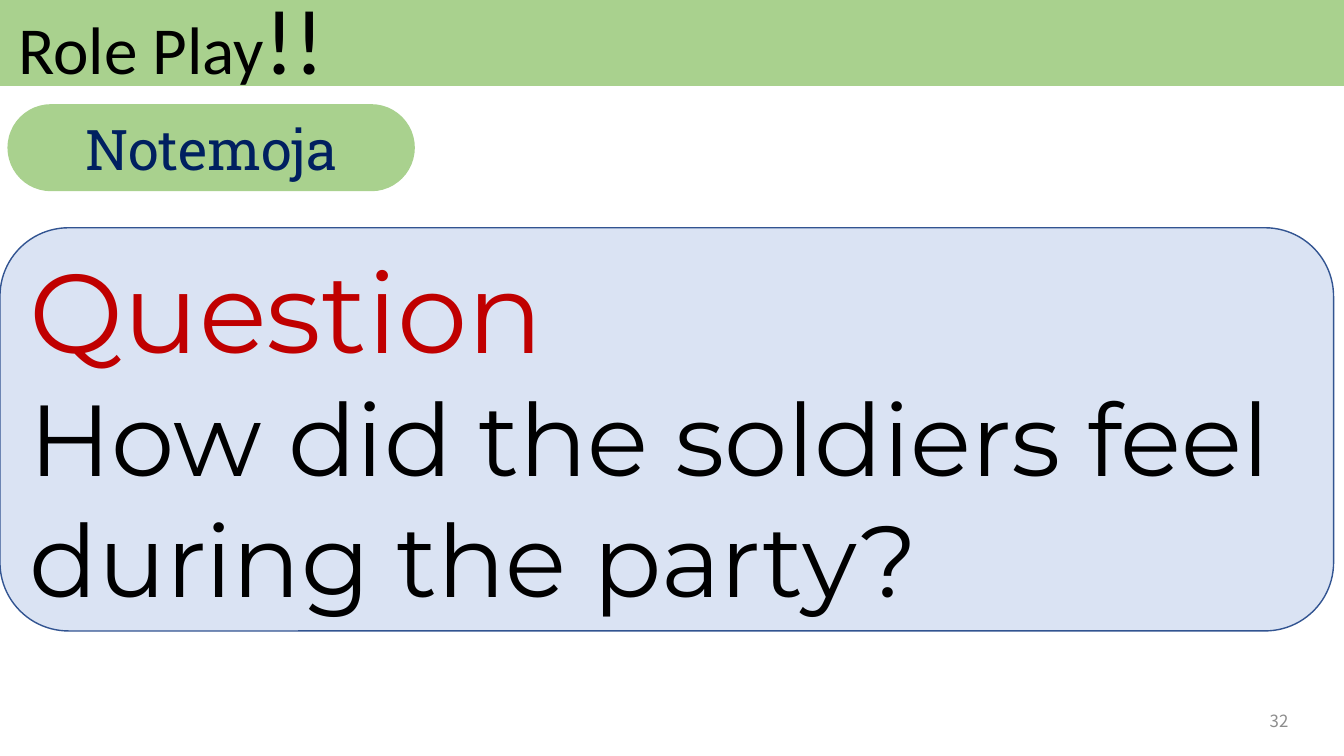
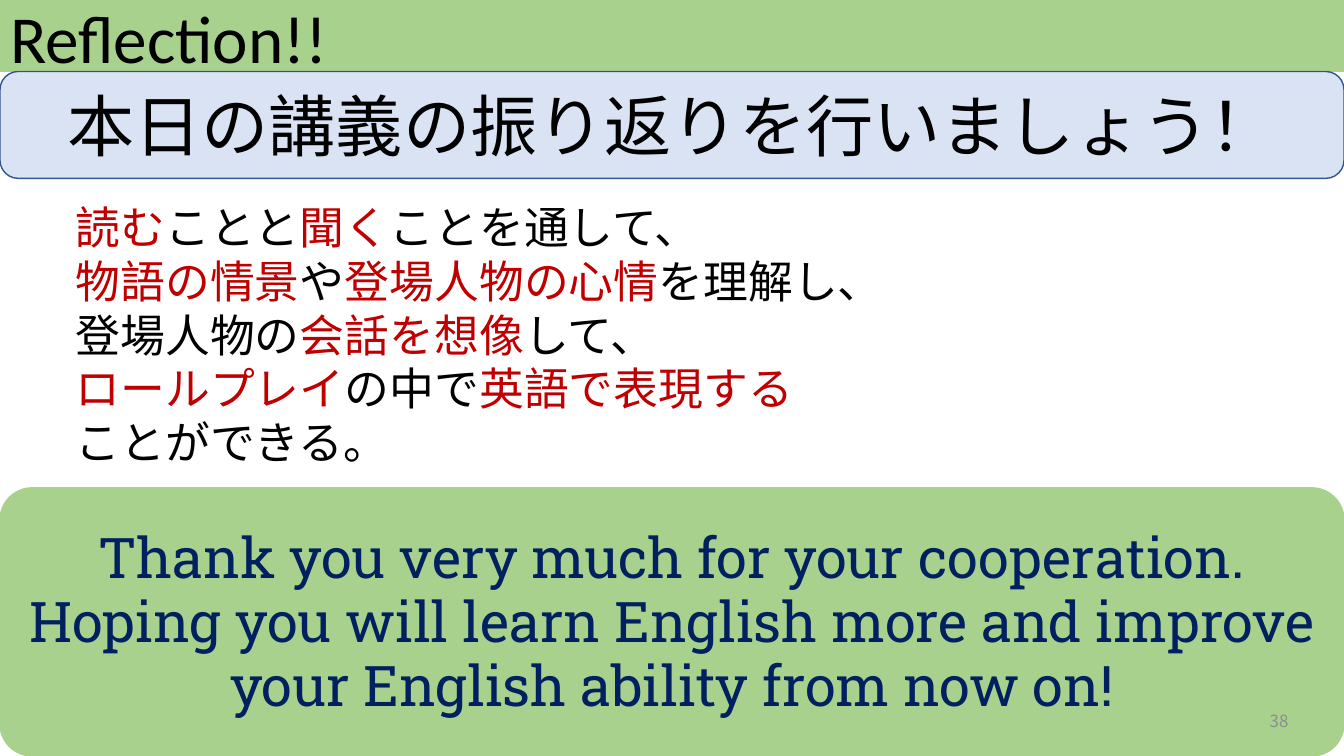
from lxml import etree
from pptx import Presentation
from pptx.dml.color import RGBColor
from pptx.enum import shapes, text
from pptx.oxml import ns
from pptx.util import Pt

GREEN = RGBColor(0xA9, 0xD1, 0x8E)
PALE_BLUE = RGBColor(0xDA, 0xE3, 0xF3)
BLUE = RGBColor(0x32, 0x54, 0x91)
NAVY = RGBColor(0x00, 0x20, 0x60)
RED = RGBColor(0xC0, 0x00, 0x00)
BLACK = RGBColor(0x00, 0x00, 0x00)
GREY = RGBColor(0x8C, 0x8C, 0x8C)

TITLE_FONT = "Calibri"
QUESTION_FONT = "Montserrat"
JAPANESE_FONT = "Noto Sans CJK JP"
SLAB_FONT = "Roboto Slab"

WIDTH, HEIGHT = 960, 540
TITLE_ONLY, TITLE_AND_BODY = 5, 1
LEFT, CENTER = text.PP_ALIGN.LEFT, text.PP_ALIGN.CENTER
RIGHT, JUSTIFY = text.PP_ALIGN.RIGHT, text.PP_ALIGN.JUSTIFY
TOP, MIDDLE = text.MSO_ANCHOR.TOP, text.MSO_ANCHOR.MIDDLE


class Lesson:
    """Holds the lesson style and the current page."""

    def __init__(self):
        self.deck = Presentation()
        self.deck.slide_width, self.deck.slide_height = Pt(WIDTH), Pt(HEIGHT)
        self.page = None

    def new_page(self, layout, band_height):
        self.page = self.deck.slides.add_slide(self.deck.slide_layouts[layout])
        band = self.panel(0, 0, WIDTH, band_height, GREEN, GREEN, corner=None)
        self.page.shapes.title.element.addprevious(band.element)

    def place(self, shape, left, top, width, height):
        shape.left, shape.top = Pt(left), Pt(top)
        shape.width, shape.height = Pt(width), Pt(height)

    def add_text(self, shape, paragraphs, font, align, anchor, spacing=1.0):
        """Each paragraph is a list of (words, size, colour) runs."""
        frame = shape.text_frame
        frame.word_wrap = True
        frame.auto_size = text.MSO_AUTO_SIZE.NONE
        frame.vertical_anchor = anchor
        for index, runs in enumerate(paragraphs):
            para = frame.add_paragraph() if index else frame.paragraphs[0]
            para.alignment, para.line_spacing = align, spacing
            para.space_before = Pt(0)
            for words, size, colour in runs:
                span = para.add_run()
                span.text = words
                span.font.size, span.font.name = Pt(size), font
                span.font.color.rgb = colour
                # East Asian glyphs need their own font entry
                asian = etree.SubElement(span.font._element, ns.qn("a:ea"))
                asian.set("typeface", font)

    def panel(self, left, top, width, height, fill, line, corner=0.17):
        kind = shapes.MSO_SHAPE.RECTANGLE
        if corner is not None:
            kind = shapes.MSO_SHAPE.ROUNDED_RECTANGLE
        box = self.page.shapes.add_shape(
            kind, Pt(left), Pt(top), Pt(width), Pt(height))
        if corner is not None:
            box.adjustments[0] = corner
        box.shadow.inherit = False
        box.fill.solid()
        box.fill.fore_color.rgb = fill
        box.line.color.rgb = line
        box.line.width = Pt(1)
        return box

    def title(self, runs, left, top, height, spacing=1.0):
        title = self.page.shapes.title
        self.place(title, left, top, 847, height)
        self.add_text(title, [runs], TITLE_FONT, LEFT, TOP, spacing)

    def body(self, paragraphs, left, top, width, height, spacing):
        body = self.page.placeholders[1]
        self.place(body, left, top, width, height)
        self.add_text(body, paragraphs, JAPANESE_FONT, JUSTIFY, TOP, spacing)
        for para in body.text_frame.paragraphs:
            properties = para._p.get_or_add_pPr()
            properties.set("marL", "0")
            properties.set("indent", "0")
            etree.SubElement(properties, ns.qn("a:buNone"))

    def page_number(self, number):
        box = self.page.shapes.add_textbox(
            Pt(711.4), Pt(500.4), Pt(216), Pt(28.8))
        self.add_text(box, [[(str(number), 12, GREY)]],
                      JAPANESE_FONT, RIGHT, MIDDLE)


def role_play(lesson):
    lesson.new_page(TITLE_ONLY, 61.2)
    lesson.title([("Role Play", 48, BLACK), ("!!", 66, BLACK)],
                 5.8, -16.6, 108.7)

    # App name
    pill = lesson.panel(5.8, 74.9, 290, 61.2, GREEN, GREEN, corner=0.5)
    lesson.add_text(pill, [[("Notemoja", 40, NAVY)]], SLAB_FONT, CENTER, MIDDLE)

    # Question
    card = lesson.panel(0, 162.7, 952.6, 288, PALE_BLUE, BLUE)
    lesson.add_text(card, [
        [("Question", 80, RED)],
        [("How did the soldiers feel during the party?", 72, BLACK)],
    ], QUESTION_FONT, LEFT, MIDDLE)
    lesson.page_number(32)


def reflection(lesson):
    lesson.new_page(TITLE_AND_BODY, 51.1)
    lesson.title([("Reflection!!", 48, BLACK)], 0, 0, 51.1, spacing=0.9)

    # Call to reflect
    call = lesson.panel(0, 51.1, WIDTH, 76.3, PALE_BLUE, BLUE)
    lesson.add_text(call, [[("本日の講義の振り返りを行いましょう！", 48, BLACK)]],
                    JAPANESE_FONT, CENTER, MIDDLE)

    # Goals, with the key words in red
    goals = [
        [("読む", RED), ("ことと", BLACK), ("聞く", RED), ("ことを通して、", BLACK)],
        [("物語の情景", RED), ("や", BLACK), ("登場人物の心情", RED),
         ("を理解し、", BLACK)],
        [("登場人物の", BLACK), ("会話を想像", RED), ("して、", BLACK)],
        [("ロールプレイ", RED), ("の中で", BLACK), ("英語で表現する", RED)],
        [("ことができる。", BLACK)],
    ]
    lesson.body([[(words, 32, colour) for words, colour in runs]
                 for runs in goals], 46.8, 139, 861, 201, Pt(38.4))

    # Closing thanks
    thanks = lesson.panel(0, 348.5, WIDTH, 191.5, GREEN, GREEN, corner=0.12)
    lesson.add_text(thanks, [
        [("Thank you very much for your cooperation.", 40, NAVY)],
        [("Hoping you will learn English more and improve "
          "your English ability from now on!", 40, NAVY)],
    ], SLAB_FONT, CENTER, MIDDLE, Pt(45.8))
    lesson.page_number(38)


def main():
    lesson = Lesson()
    role_play(lesson)
    reflection(lesson)
    lesson.deck.save("out.pptx")


if __name__ == "__main__":
    main()
